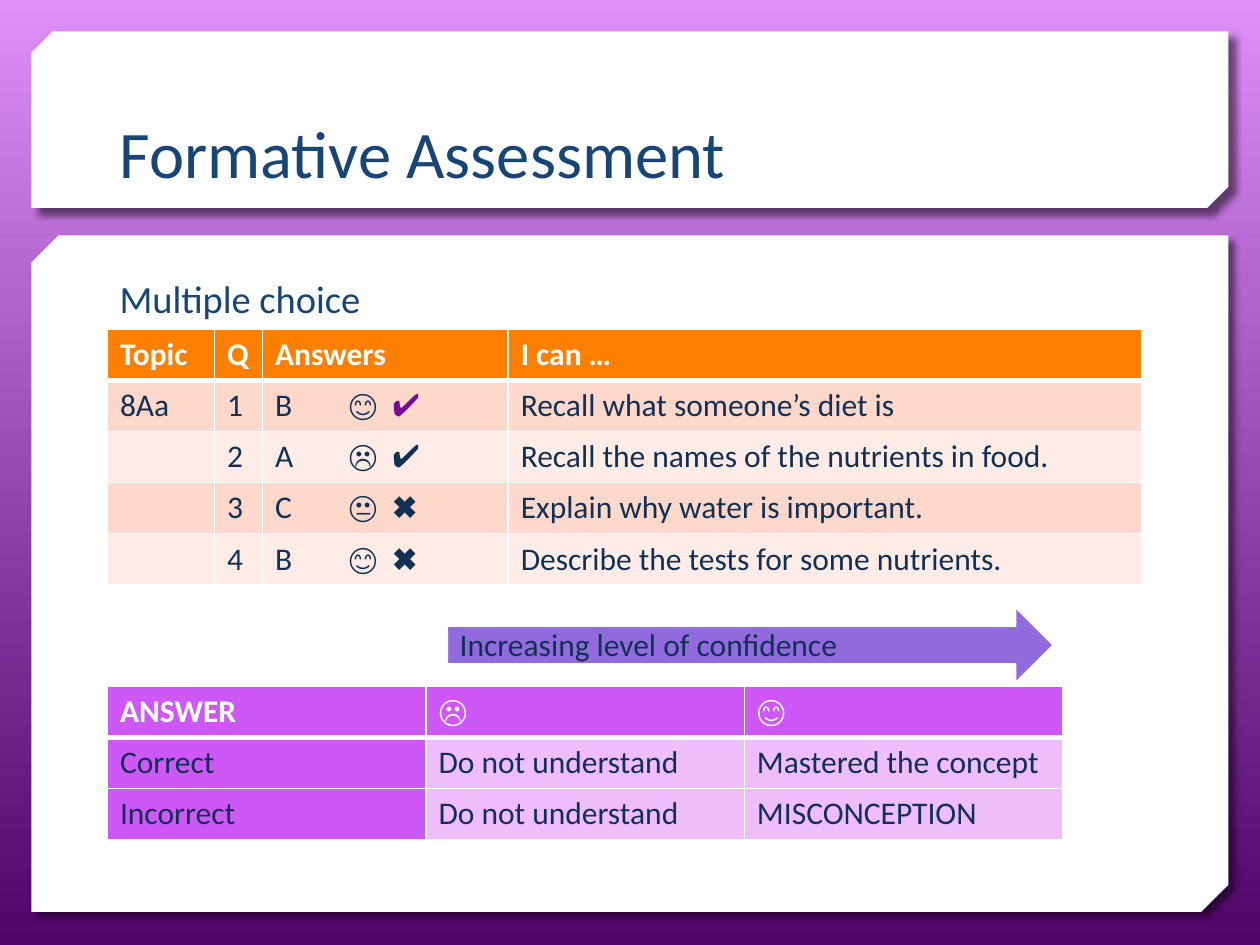
from lxml.etree import SubElement
from pptx import Presentation
from pptx.dml.color import RGBColor
from pptx.enum.shapes import MSO_SHAPE
from pptx.enum.text import MSO_ANCHOR
from pptx.oxml.ns import qn
from pptx.util import Pt

hue = RGBColor.from_string
WHITE, NAVY, BLUE = "FFFFFF", "103154", "174576"


def put(frame, text, size=18, color=NAVY, bold=False, anchor=MSO_ANCHOR.TOP):
    frame.word_wrap = True
    frame.vertical_anchor = anchor
    run = frame.paragraphs[0].add_run()
    run.text = text
    font = run.font
    font.name = "Calibri"
    font.size = Pt(size)
    font.bold = bold
    font.color.rgb = hue(color)


def grid(rows, top, widths, shade):
    frame = slide.shapes.add_table(len(rows), len(widths), Pt(61.4), Pt(top),
                                   Pt(sum(widths)), Pt(29.2 * len(rows)))
    table = frame.table
    for col, width in zip(table.columns, widths):
        col.width = Pt(width)
    for r, row in enumerate(rows):
        table.rows[r].height = Pt(29.2)
        for c, text in enumerate(row):
            cell = table.cell(r, c)
            props = cell._tc.get_or_add_tcPr()
            for side in "LRTB":
                thick = (r, side) in ((0, "B"), (1, "T"))
                line = SubElement(props, qn("a:ln" + side), w=str(Pt(3 if thick else 1)))
                fill = SubElement(line, qn("a:solidFill"))
                SubElement(fill, qn("a:srgbClr"), val=WHITE)
            cell.fill.solid()
            cell.fill.fore_color.rgb = hue(shade(r, c))
            if text:
                put(cell.text_frame, text, color=NAVY if r else WHITE, bold=r == 0)
    return table


deck = Presentation()
deck.slide_width, deck.slide_height = Pt(720), Pt(540)
slide = deck.slides.add_slide(deck.slide_layouts[6])

back = slide.background.fill
back.gradient()
back.gradient_angle = 270
for stop, color in zip(back.gradient_stops, ("DE8FFA", "4E0468")):
    stop.color.rgb = hue(color)

for top, height, snip in ((134.5, 386.5, 0.04), (18, 100.8, 0.12)):
    panel = slide.shapes.add_shape(MSO_SHAPE.SNIP_2_DIAG_RECTANGLE,
                                   Pt(18), Pt(top), Pt(684), Pt(height))
    panel.adjustments[0] = snip
    panel.adjustments[1] = 0
    panel.fill.solid()
    panel.fill.fore_color.rgb = hue(WHITE)
    panel.line.fill.background()
    panel.shadow.inherit = False
    glow = SubElement(panel._element.spPr.find(qn("a:effectLst")), qn("a:outerShdw"),
                      blurRad=str(Pt(4)), dist=str(Pt(5)), dir="2700000",
                      algn="tl", rotWithShape="0")
    tint = SubElement(glow, qn("a:srgbClr"), val="000000")
    SubElement(tint, qn("a:alpha"), val="50000")

title = slide.shapes.add_textbox(Pt(61.2), Pt(23), Pt(597), Pt(90))
put(title.text_frame, "Formative Assessment", size=38, color=BLUE, anchor=MSO_ANCHOR.BOTTOM)
body = slide.shapes.add_textbox(Pt(61.2), Pt(153.4), Pt(615.6), Pt(34))
put(body.text_frame, "Multiple choice", size=22, color=BLUE)

quiz = grid([
    ("Topic", "Q", "Answers", "I can …"),
    ("8Aa", "1", "B\t😊\t", "Recall what someone’s diet is"),
    ("", "2", "A\t☹️\t", "Recall the names of the nutrients in food."),
    ("", "3", "C\t😐\t", "Explain why water is important."),
    ("", "4", "B\t😊\t", "Describe the tests for some nutrients."),
], 188.2, (61.2, 27.4, 140.4, 362), lambda r, c: ("FFECE7", "FFD8CC")[r % 2] if r else "FF7F01")

marks = (("✔️", "76079D"), ("✔️", NAVY), ("✖️", NAVY), ("✖️", NAVY))
for r, (mark, color) in enumerate(marks, 1):
    frame = quiz.cell(r, 2).text_frame
    tabs = SubElement(frame.paragraphs[0]._p.get_or_add_pPr(), qn("a:tabLst"))
    for stop in (42, 67):
        SubElement(tabs, qn("a:tab"), pos=str(Pt(stop)), algn="l")
    put(frame, mark, color=color)

grid([
    ("ANSWER", "☹️", "😊"),
    ("Correct", "Do not understand", "Mastered the concept"),
    ("Incorrect", "Do not understand", "MISCONCEPTION"),
], 392.2, (182, 182, 182), lambda r, c: "F0BDFB" if r and c else "CE57F8")

group = slide.shapes.add_group_shape()
arrow = group.shapes.add_shape(MSO_SHAPE.RIGHT_ARROW, Pt(255.6), Pt(347), Pt(346.3), Pt(43.2))
arrow.shadow.inherit = False
arrow.fill.solid()
arrow.fill.fore_color.rgb = hue("916ADD")
arrow.line.color.rgb = hue(WHITE)
arrow.line.width = Pt(1)
label = group.shapes.add_textbox(Pt(255.6), Pt(353.8), Pt(346.3), Pt(29.1))
put(label.text_frame, "Increasing level of confidence")

deck.save("out.pptx")
